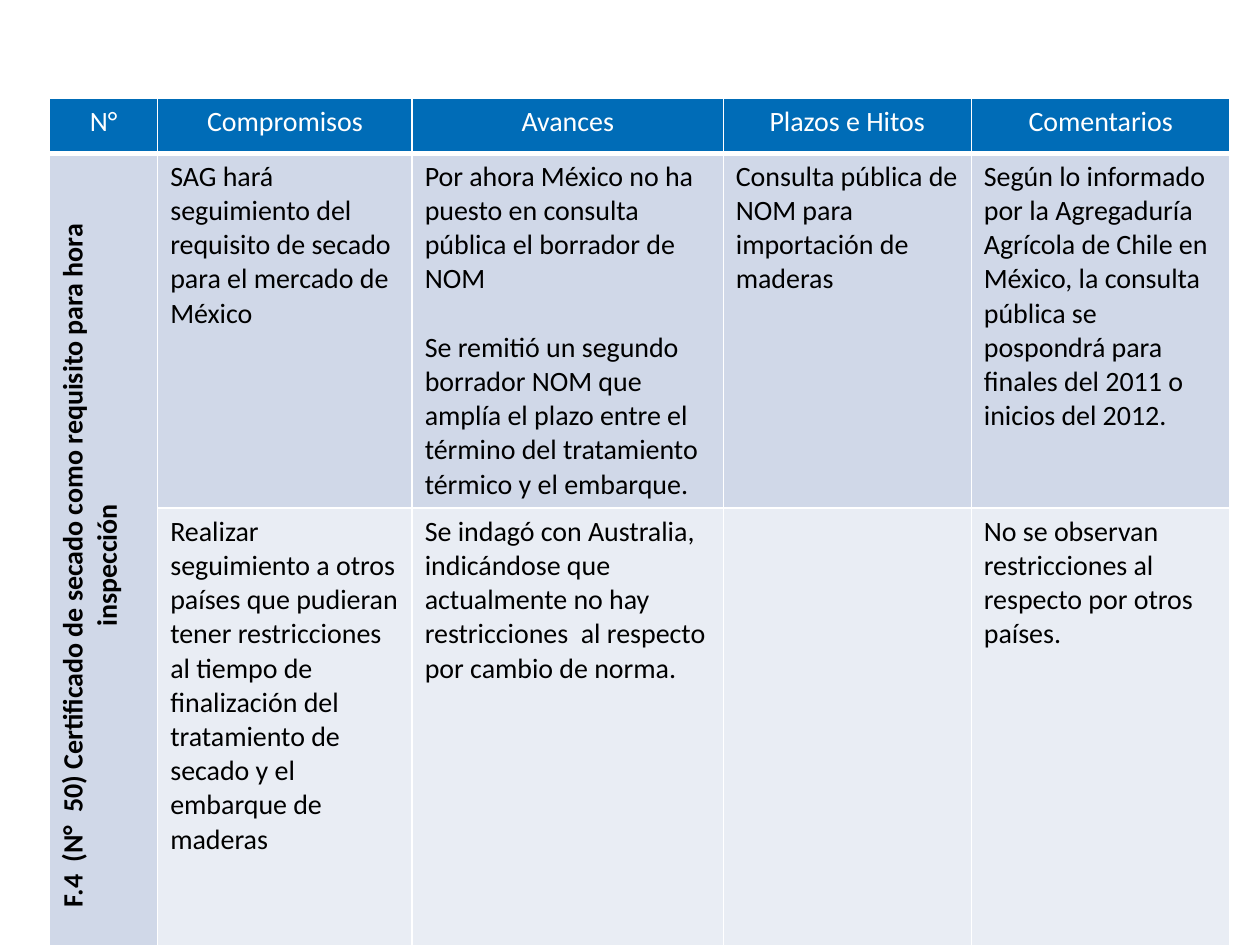
from typing import NamedTuple

from lxml.etree import SubElement
from pptx import Presentation
from pptx.dml.color import RGBColor
from pptx.enum.text import PP_ALIGN
from pptx.oxml.ns import qn
from pptx.util import Cm, Pt

HEADER_BLUE = "006CB7"
ROW_BLUE = "D0D8E8"
ROW_PALE = "E9EDF4"
WHITE = "FFFFFF"
BLACK = "000000"
FONT_SIZE = 16
PARAGRAPH_GAP = 19.5


class Commitment(NamedTuple):
    fill: str
    commitment: str
    progress: str
    milestones: str
    comments: str


HEADINGS = ("N°", "Compromisos", "Avances", "Plazos e Hitos", "Comentarios")
TOPIC = "F.4  (N°  50) Certificado de secado como requisito para hora inspección"
COMMITMENTS = (
    Commitment(
        ROW_BLUE,
        "SAG hará seguimiento del requisito de secado para el mercado de México",
        "Por ahora México no ha puesto en consulta pública el borrador de NOM\n"
        "Se remitió un segundo borrador NOM que amplía el plazo entre el término "
        "del tratamiento térmico y el embarque.",
        "Consulta pública de NOM para importación de maderas",
        "Según lo informado por la Agregaduría Agrícola de Chile en México, la "
        "consulta pública se pospondrá para finales del 2011 o inicios del 2012.",
    ),
    Commitment(
        ROW_PALE,
        "Realizar seguimiento a otros países que pudieran tener restricciones al "
        "tiempo de finalización del tratamiento de secado y el embarque de maderas",
        "Se indagó con Australia, indicándose que actualmente no hay "
        "restricciones  al respecto por cambio de norma.",
        "",
        "No se observan restricciones al respecto por otros países.",
    ),
)
COLUMN_WIDTHS = (2.18, 5.13, 6.27, 5.0, 5.22)
ROW_HEIGHTS = (1.11, 7.15, 8.8)


def rgb(hex_color: str) -> RGBColor:
    return RGBColor.from_string(hex_color)


def set_borders(cell, bottom: float = 1) -> None:
    """Give the cell white borders; widths are in points."""
    properties = cell._tc.get_or_add_tcPr()
    for side, width in (("lnL", 1), ("lnR", 1), ("lnT", 1), ("lnB", bottom)):
        line = SubElement(properties, qn(f"a:{side}"), w=str(Pt(width)))
        solid = SubElement(line, qn("a:solidFill"))
        SubElement(solid, qn("a:srgbClr"), val=WHITE)


def write(cell, text: str, *, color: str = BLACK, bold: bool = False,
          align: PP_ALIGN = PP_ALIGN.LEFT) -> None:
    cell.text = text
    for index, paragraph in enumerate(cell.text_frame.paragraphs):
        paragraph.alignment = align
        if index:
            paragraph.space_before = Pt(PARAGRAPH_GAP)
        font = paragraph.font
        for run in paragraph.runs:
            font = run.font
            font.name = "Calibri"
            font.size = Pt(FONT_SIZE)
            font.bold = bold
            font.color.rgb = rgb(color)


def paint(cell, fill: str, bottom: float = 1) -> None:
    set_borders(cell, bottom)
    cell.fill.solid()
    cell.fill.fore_color.rgb = rgb(fill)


def main() -> None:
    presentation = Presentation()
    presentation.slide_width = Cm(25.4)
    presentation.slide_height = Cm(19.05)
    slide = presentation.slides.add_slide(presentation.slide_layouts[6])

    table = slide.shapes.add_table(
        len(ROW_HEIGHTS), len(COLUMN_WIDTHS), Cm(1), Cm(1.98),
        Cm(sum(COLUMN_WIDTHS)), Cm(sum(ROW_HEIGHTS)),
    ).table
    for column, width in zip(table.columns, COLUMN_WIDTHS):
        column.width = Cm(width)
    for row, height in zip(table.rows, ROW_HEIGHTS):
        row.height = Cm(height)

    for column, heading in enumerate(HEADINGS):
        cell = table.cell(0, column)
        paint(cell, HEADER_BLUE, bottom=3)
        write(cell, heading, color=WHITE, align=PP_ALIGN.CENTER)

    for row, (fill, *texts) in enumerate(COMMITMENTS, start=1):
        for column, text in enumerate(texts, start=1):
            cell = table.cell(row, column)
            paint(cell, fill)
            write(cell, text)

    topic = table.cell(1, 0)
    topic.merge(table.cell(len(COMMITMENTS), 0))
    paint(topic, ROW_BLUE)
    write(topic, TOPIC, bold=True, align=PP_ALIGN.CENTER)
    topic._tc.get_or_add_tcPr().set("vert", "vert270")

    presentation.save("out.pptx")


if __name__ == "__main__":
    main()
